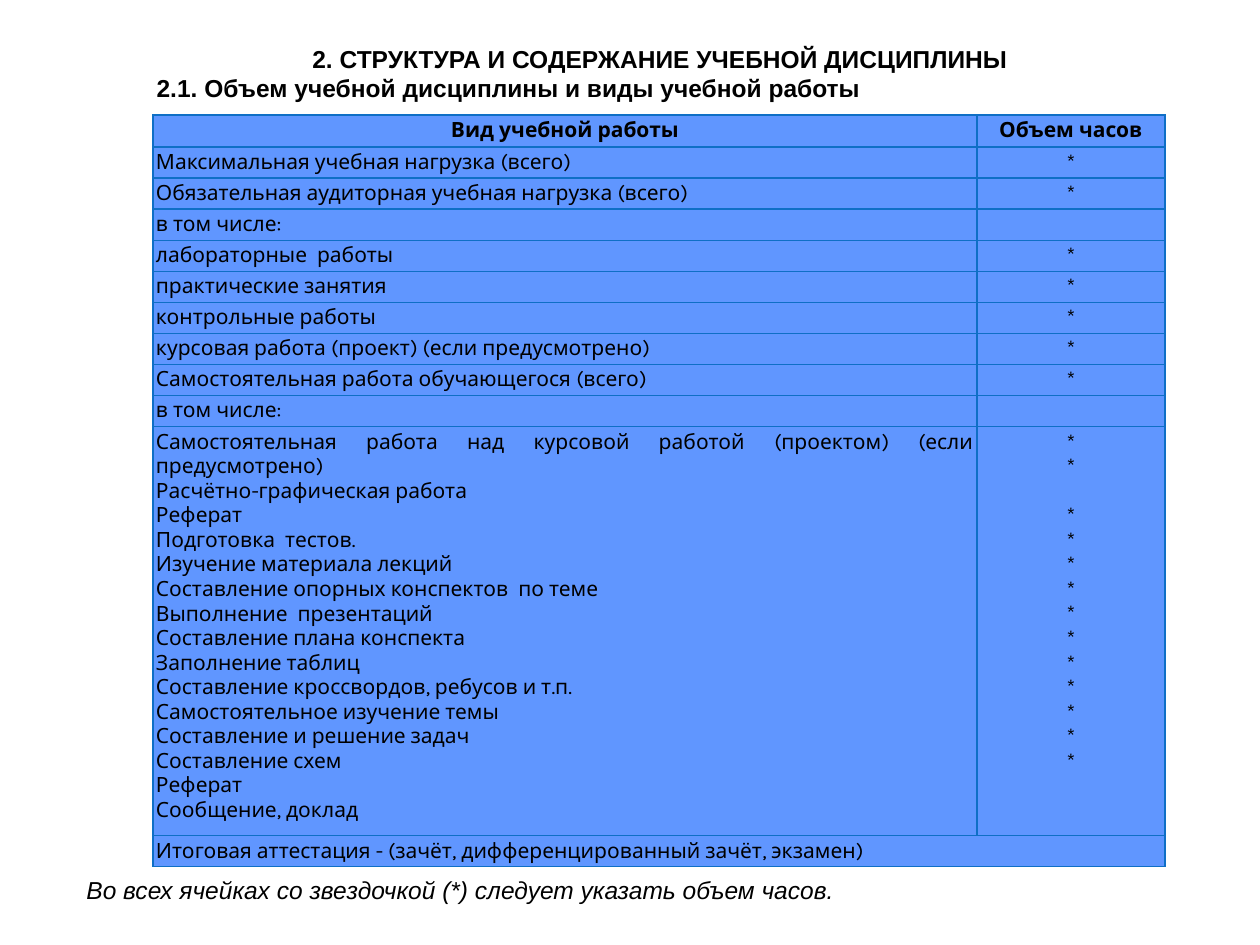
"""Build a slide with the table of course workload by kind of study work."""
import pptx
import pptx.util
import pptx.oxml
import pptx.oxml.ns
import pptx.dml.color
import pptx.enum.text
import lxml.etree

EMU_PER_PX = 914400 / 126
COLORS = {"text": "000000", "cell": "6096FF", "border": "0F6FC6"}
ALIGN = pptx.enum.text.PP_ALIGN
HEADER_PX, ROW_PX, TASKS_PX = 32, 31, 409


def px(length):
    return pptx.util.Emu(round(length * EMU_PER_PX))


def write(paragraph, text, font, size, align, bold=False, italic=False):
    paragraph.alignment = align
    run = paragraph.add_run()
    run.text = text
    run.font.name = font
    run.font.size = pptx.util.Pt(size)
    run.font.bold = bold
    run.font.italic = italic
    run.font.color.rgb = pptx.dml.color.RGBColor.from_string(COLORS["text"])


tasks = [
    "Самостоятельная работа над курсовой работой (проектом) (если предусмотрено)",
    "Расчётно-графическая работа",
    "Реферат",
    "Подготовка  тестов.",
    "Изучение материала лекций",
    "Составление опорных конспектов  по теме",
    "Выполнение  презентаций",
    "Составление плана конспекта",
    "Заполнение таблиц",
    "Составление кроссвордов, ребусов и т.п.",
    "Самостоятельное изучение темы",
    "Составление и решение задач",
    "Составление схем",
    "Реферат",
    "Сообщение, доклад",
]
workload = [
    (["Вид учебной работы"], ["Объем часов"]),
    (["Максимальная учебная нагрузка (всего)"], ["*"]),
    (["Обязательная аудиторная учебная нагрузка (всего)"], ["*"]),
    (["в том числе:"], []),
    (["лабораторные  работы"], ["*"]),
    (["практические занятия"], ["*"]),
    (["контрольные работы"], ["*"]),
    (["курсовая работа (проект) (если предусмотрено)"], ["*"]),
    (["Самостоятельная работа обучающегося (всего)"], ["*"]),
    (["в том числе:"], []),
    (tasks, ["*"] * 13),
    (["Итоговая аттестация - (зачёт, дифференцированный зачёт, экзамен)"], []),
]

presentation = pptx.Presentation()
presentation.slide_width = px(1260)
presentation.slide_height = px(945)
slide = presentation.slides.add_slide(presentation.slide_layouts[5])

heading = slide.shapes.title
heading.left, heading.top, heading.width, heading.height = px(144), px(37), px(1032), px(72)
heading.text_frame.auto_size = pptx.enum.text.MSO_AUTO_SIZE.NONE
heading.text_frame.vertical_anchor = pptx.enum.text.MSO_ANCHOR.MIDDLE
write(heading.text_frame.paragraphs[0], "2. СТРУКТУРА И СОДЕРЖАНИЕ УЧЕБНОЙ ДИСЦИПЛИНЫ",
      "Arial", 14, ALIGN.CENTER, bold=True)
write(heading.text_frame.add_paragraph(), "2.1. Объем учебной дисциплины и виды учебной работы",
      "Arial", 14, ALIGN.LEFT, bold=True)

table_height = HEADER_PX + ROW_PX * (len(workload) - 2) + TASKS_PX
hours_table = slide.shapes.add_table(
    len(workload), 2, px(153), px(115), px(1012), px(table_height)).table
hours_table.columns[0].width = px(824)
hours_table.columns[1].width = px(188)

for row_index, row_texts in enumerate(workload):
    is_header = row_index == 0
    is_tasks = row_texts[0] is tasks
    hours_table.rows[row_index].height = px(
        HEADER_PX if is_header else TASKS_PX if is_tasks else ROW_PX)
    for column_index, lines in enumerate(row_texts):
        cell = hours_table.cell(row_index, column_index)
        cell.margin_left = cell.margin_right = px(3)
        cell.margin_top = cell.margin_bottom = px(3)
        for side in ("lnL", "lnR", "lnT", "lnB"):
            border = lxml.etree.SubElement(
                cell._tc.get_or_add_tcPr(), pptx.oxml.ns.qn("a:" + side),
                w=str(pptx.util.Pt(0.79)))
            border_fill = lxml.etree.SubElement(border, pptx.oxml.ns.qn("a:solidFill"))
            lxml.etree.SubElement(
                border_fill, pptx.oxml.ns.qn("a:srgbClr"), val=COLORS["border"])
        cell.fill.solid()
        cell.fill.fore_color.rgb = pptx.dml.color.RGBColor.from_string(COLORS["cell"])

        align = ALIGN.LEFT
        if is_header or column_index == 1:
            align = ALIGN.CENTER
        elif is_tasks:
            align = ALIGN.JUSTIFY
        for line_index, line in enumerate(lines):
            paragraph = (cell.text_frame.add_paragraph() if line_index
                         else cell.text_frame.paragraphs[0])
            write(paragraph, line, "Karla", 12, align, bold=is_header)
            if column_index == 1 and line_index == 2:
                paragraph.space_before = pptx.util.Pt(14)
        if not lines:
            lxml.etree.SubElement(cell.text_frame.paragraphs[0]._p,
                                  pptx.oxml.ns.qn("a:endParaRPr"), sz="1200")

last_row = len(workload) - 1
hours_table.cell(last_row, 0).merge(hours_table.cell(last_row, 1))

footnote = slide.shapes.add_textbox(px(74), px(869), px(1142), px(43)).text_frame
footnote.word_wrap = True
write(footnote.paragraphs[0], "Во всех ячейках со звездочкой (*) следует указать объем часов.",
      "Arial", 14, ALIGN.LEFT, italic=True)

presentation.save("out.pptx")
